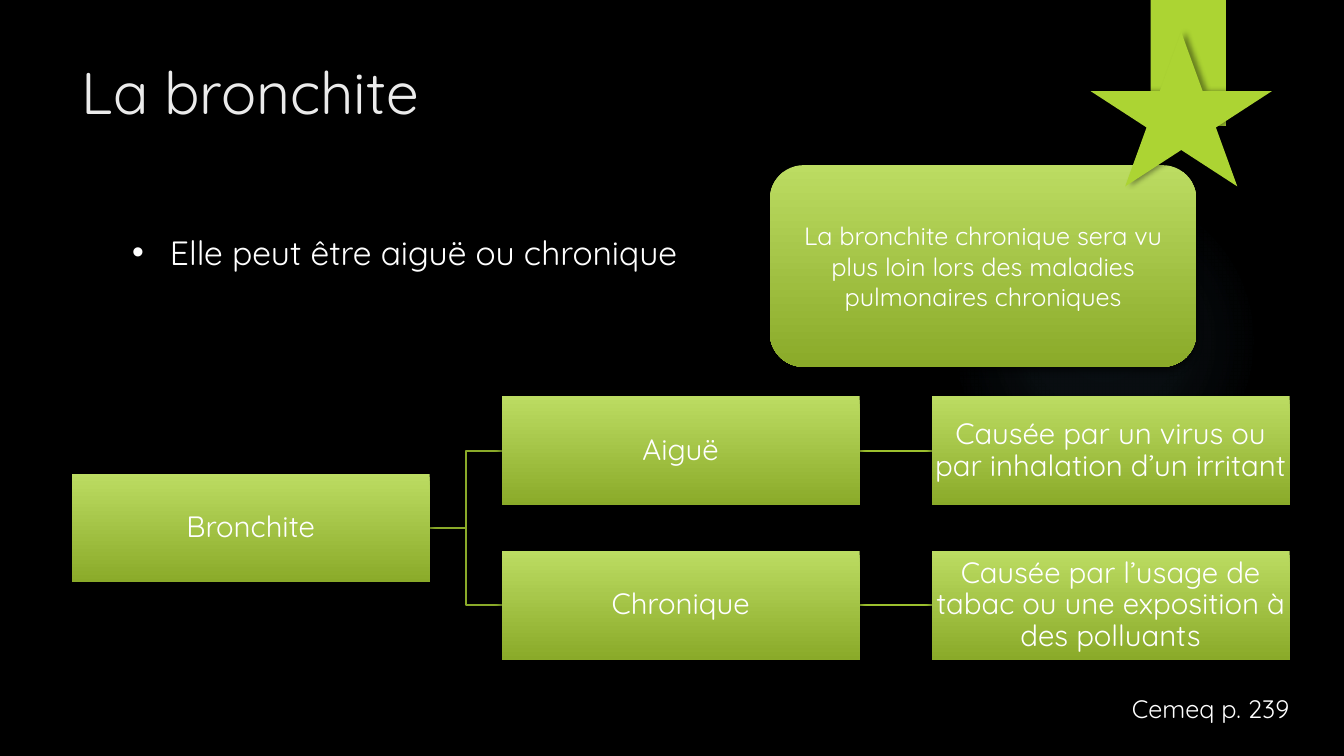
from lxml.etree import SubElement
from pptx import Presentation
from pptx.dml.color import RGBColor
from pptx.enum.shapes import MSO_CONNECTOR as Link, MSO_SHAPE as Shape
from pptx.enum.text import MSO_ANCHOR as Anchor, PP_ALIGN as Align
from pptx.oxml import parse_xml
from pptx.oxml.ns import nsdecls, qn
from pptx.util import Pt

FONT = "Quicksand"
BLACK = RGBColor(0x00, 0x00, 0x00)
WHITE = RGBColor(0xFF, 0xFF, 0xFF)
OFF_WHITE = RGBColor(0xEB, 0xEB, 0xEB)
LIME = RGBColor(0xAC, 0xD4, 0x33)
LIGHT_GREEN = RGBColor(0xBC, 0xDC, 0x62)
DARK_GREEN = RGBColor(0x8A, 0xAA, 0x29)
LINK_GREEN = RGBColor(0x9C, 0xC0, 0x2E)
GLOW_BLUE = RGBColor(0x7A, 0xC4, 0xF0)

TITLE = "La bronchite"
BULLET = "Elle peut être aiguë ou chronique"
NOTE = "La bronchite chronique sera vu plus loin lors des maladies pulmonaires chroniques"
REFERENCE = "Cemeq p. 239"
ROOT = "Bronchite"
BRANCHES = [
    ("Aiguë", "Causée par un virus ou par inhalation d’un irritant"),
    ("Chronique", "Causée par l’usage de tabac ou une exposition à des polluants"),
]
GLOW_STOPS = [(0, 7), (36, 6), (69, 0)]

TREE_LEFT, TREE_MIDDLE = 51.2, 377.2
NODE_WIDTH, NODE_HEIGHT = 255.7, 77.8
COLUMN_STEP, ROW_STEP = 307.1, 110.2


def write(frame, text, size, color=WHITE, align=Align.LEFT, anchor=Anchor.TOP):
    frame.word_wrap = True
    frame.vertical_anchor = anchor
    frame.text = text
    para = frame.paragraphs[0]
    para.alignment = align
    para.space_before = Pt(0)
    para.font.name = FONT
    para.font.size = Pt(size)
    para.font.color.rgb = color
    return para


def add_shadow(shape, alpha, blur, distance, angle):
    effects = shape._element.spPr.find(qn("a:effectLst"))
    shadow = SubElement(
        effects, qn("a:outerShdw"), blurRad=str(Pt(blur)), dist=str(Pt(distance)),
        dir=str(angle * 60000), algn="ctr", rotWithShape="0")
    color = SubElement(shadow, qn("a:srgbClr"), val=str(BLACK))
    SubElement(color, qn("a:alpha"), val=str(alpha * 1000))


def add_figure(kind, left, top, width, height, color=LIME):
    shape = page.shapes.add_shape(kind, Pt(left), Pt(top), Pt(width), Pt(height))
    shape.shadow.inherit = False
    shape.line.fill.background()
    shape.fill.solid()
    shape.fill.fore_color.rgb = color
    return shape


def add_panel(kind, left, top, width, height, text, size):
    shape = add_figure(kind, left, top, width, height)
    shape.fill.gradient()
    shape.fill.gradient_angle = 270
    for stop, color, position in zip(
            shape.fill.gradient_stops, (LIGHT_GREEN, DARK_GREEN), (0, 1)):
        stop.color.rgb = color
        stop.position = position
    add_shadow(shape, 60, 5, 3, 90)
    para = write(shape.text_frame, text, size, align=Align.CENTER, anchor=Anchor.MIDDLE)
    return shape, para


def add_node(column, middle, text):
    shape, para = add_panel(
        Shape.RECTANGLE, TREE_LEFT + column * COLUMN_STEP, middle - NODE_HEIGHT / 2,
        NODE_WIDTH, NODE_HEIGHT, text, 21)
    frame = shape.text_frame
    frame.margin_left = frame.margin_right = Pt(0.9)
    frame.margin_top = frame.margin_bottom = Pt(0.9)
    para.line_spacing = 0.9


def add_link(kind, column, start, end, color):
    left = TREE_LEFT + column * COLUMN_STEP + NODE_WIDTH
    right = TREE_LEFT + (column + 1) * COLUMN_STEP
    link = page.shapes.add_connector(kind, Pt(left), Pt(start), Pt(right), Pt(end))
    link.line.color.rgb = color
    link.line.width = Pt(1.5)
    SubElement(link._element.spPr, qn("a:effectLst"))


def place(shape, left, top, width, height):
    shape.left, shape.top = Pt(left), Pt(top)
    shape.width, shape.height = Pt(width), Pt(height)


deck = Presentation()
deck.slide_width, deck.slide_height = Pt(960), Pt(540)
page = deck.slides.add_slide(deck.slide_layouts[1])
page.background.fill.solid()
page.background.fill.fore_color.rgb = BLACK

glow = add_figure(Shape.OVAL, 677.5, 131.8, 221.8, 221.8)
stops = "".join(
    f'<a:gs pos="{position * 1000}"><a:srgbClr val="{GLOW_BLUE}">'
    f'<a:alpha val="{alpha * 1000}"/></a:srgbClr></a:gs>'
    for position, alpha in GLOW_STOPS)
glow_fill = parse_xml(
    f'<a:gradFill {nsdecls("a")}><a:gsLst>{stops}</a:gsLst><a:path path="circle">'
    '<a:fillToRect l="50000" t="50000" r="50000" b="50000"/></a:path></a:gradFill>')
properties = glow._element.spPr
properties.replace(properties.find(qn("a:solidFill")), glow_fill)

ribbon = add_figure(Shape.RECTANGLE, 821.9, 0, 53.8, 90)
add_shadow(ribbon, 45, 3, 2, 90)

title = page.shapes.title
place(title, 51.2, 36, 740.9, 110.2)
write(title.text_frame, TITLE, 42, OFF_WHITE)

body = page.placeholders[1]
place(body, 87.2, 162, 704.2, 330.5)
body.text_frame.text = BULLET
bullet = body.text_frame.paragraphs[0]._p.get_or_add_pPr()
bullet.set("marL", str(Pt(27)))
bullet.set("indent", str(Pt(-27)))
bullet_color = SubElement(bullet, qn("a:buClr"))
SubElement(bullet_color, qn("a:srgbClr"), val=str(LIME))
SubElement(bullet, qn("a:buSzPct"), val="80000")
SubElement(bullet, qn("a:buFont"), typeface="Arial")
SubElement(bullet, qn("a:buChar"), char="▶")
write(body.text_frame, BULLET, 24)

reference = page.shapes.add_textbox(Pt(801.4), Pt(491.8), Pt(149), Pt(28.8))
write(reference.text_frame, REFERENCE, 18)

add_panel(Shape.ROUNDED_RECTANGLE, 550, 118, 304.5, 144, NOTE, 18)

row_middles = [TREE_MIDDLE + (row - 0.5) * ROW_STEP for row in range(len(BRANCHES))]
for middle in row_middles:
    add_link(Link.ELBOW, 0, TREE_MIDDLE, middle, DARK_GREEN)
    add_link(Link.STRAIGHT, 1, middle, middle, LINK_GREEN)

add_node(0, TREE_MIDDLE, ROOT)
for middle, (form, cause) in zip(row_middles, BRANCHES):
    add_node(1, middle, form)
    add_node(2, middle, cause)

star = add_figure(Shape.STAR_5_POINT, 779, 23, 129.6, 110.2)
add_shadow(star, 40, 4, 3, 0)

deck.save("out.pptx")
